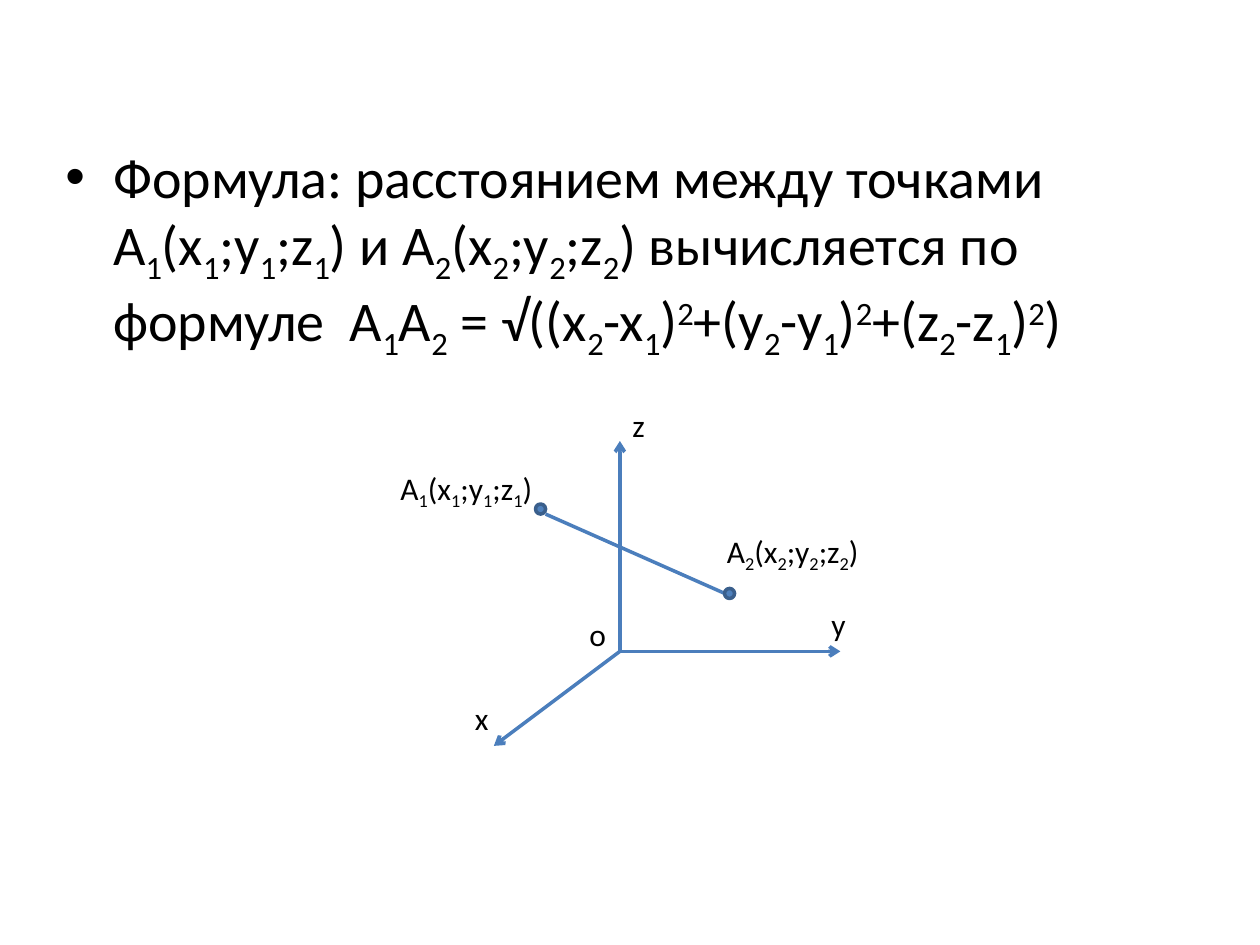
from itertools import groupby

from lxml import etree
from pptx import Presentation
from pptx.dml.color import RGBColor
from pptx.enum.shapes import MSO_CONNECTOR, MSO_SHAPE
from pptx.oxml.ns import qn
from pptx.util import Inches, Pt

STRAIGHT = MSO_CONNECTOR.STRAIGHT
OVAL = MSO_SHAPE.OVAL
COLORS = {"text": "000000", "line": "4B7EBC", "point": "4F81BD", "outline": "3A5F8C"}
# Index character -> (plain digit, baseline shift in 1/1000 percent)
INDICES = {"₁": ("1", -25000), "₂": ("2", -25000), "²": ("2", 30000)}

prs = Presentation()
prs.slide_width, prs.slide_height = Inches(10), Inches(7.5)
slide = prs.slides.add_slide(prs.slide_layouts[6])


def add_text(text, left, top, width, height, size=18, bullet=False):
    """Add a text box, turning index characters into shifted digits."""
    box = slide.shapes.add_textbox(Inches(left), Inches(top), Inches(width), Inches(height))
    box.text_frame.word_wrap = True
    paragraph = box.text_frame.paragraphs[0]
    for character, group in groupby(text, key=lambda c: c if c in INDICES else None):
        digit, shift = INDICES.get(character, (None, 0))
        run = paragraph.add_run()
        run.text = digit or "".join(group)
        run.font.name = "Calibri"
        run.font.size = Pt(size)
        run.font.color.rgb = RGBColor.from_string(COLORS["text"])
        if shift:
            run._r.get_or_add_rPr().set("baseline", str(shift))
    if bullet:
        paragraph.space_before = Pt(size * 0.2)
        properties = paragraph._p.get_or_add_pPr()
        properties.set("marL", str(Inches(0.38)))
        properties.set("indent", str(Inches(-0.38)))
        etree.SubElement(properties, qn("a:buFont"), typeface="Arial")
        etree.SubElement(properties, qn("a:buChar"), char="•")


def add_line(start, end, arrow=False):
    line = slide.shapes.add_connector(STRAIGHT, *map(Inches, start + end))
    line.line.color.rgb = RGBColor.from_string(COLORS["line"])
    line.line.width = Pt(2)
    if arrow:
        etree.SubElement(line.line._get_or_add_ln(), qn("a:tailEnd"), type="arrow")
    etree.SubElement(line._element.spPr, qn("a:effectLst"))


add_text(
    "Формула: расстоянием между точками А₁(x₁;y₁;z₁) и А₂(x₂;y₂;z₂) "
    "вычисляется по формуле  А₁А₂ = √((x₂-x₁)²+(y₂-y₁)²+(z₂-z₁)²)",
    0.42, 1.08, 9, 5.62, size=32, bullet=True,
)

# Coordinate axes z, y, x and the segment between the two points
origin = (4.92, 5.17)
for axis_end in [(4.92, 3.5), (6.67, 5.17), (3.92, 5.92)]:
    add_line(origin, axis_end, arrow=True)
add_line((4.33, 4.08), (5.82, 4.74))

point_size = Inches(0.08)
for left, top in [(4.25, 4), (5.75, 4.67)]:
    point = slide.shapes.add_shape(OVAL, Inches(left), Inches(top), point_size, point_size)
    point.shadow.inherit = False
    point.fill.solid()
    point.fill.fore_color.rgb = RGBColor.from_string(COLORS["point"])
    point.line.color.rgb = RGBColor.from_string(COLORS["outline"])
    point.line.width = Pt(2)

labels = [
    ("А₁(x₁;y₁;z₁)", 3.08, 3.67, 1.42),
    ("А₂(x₂;y₂;z₂)", 5.67, 4.17, 1.42),
    ("о", 4.58, 4.83, 0.25),
    ("x", 3.67, 5.5, 0.42),
    ("y", 6.5, 4.75, 0.42),
    ("z", 4.92, 3.17, 0.42),
]
for label, left, top, width in labels:
    add_text(label, left, top, width, 0.4)

prs.save("out.pptx")
